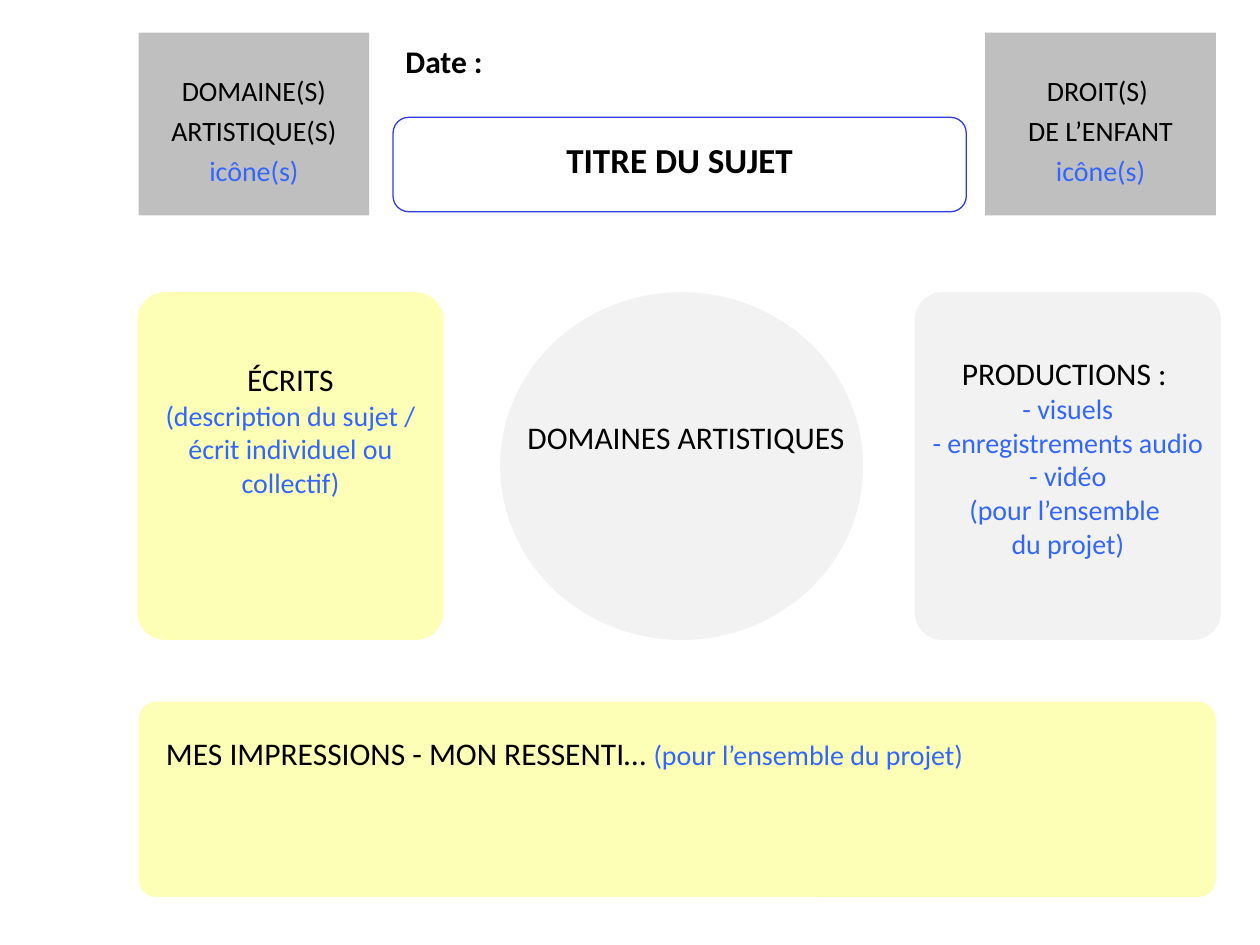
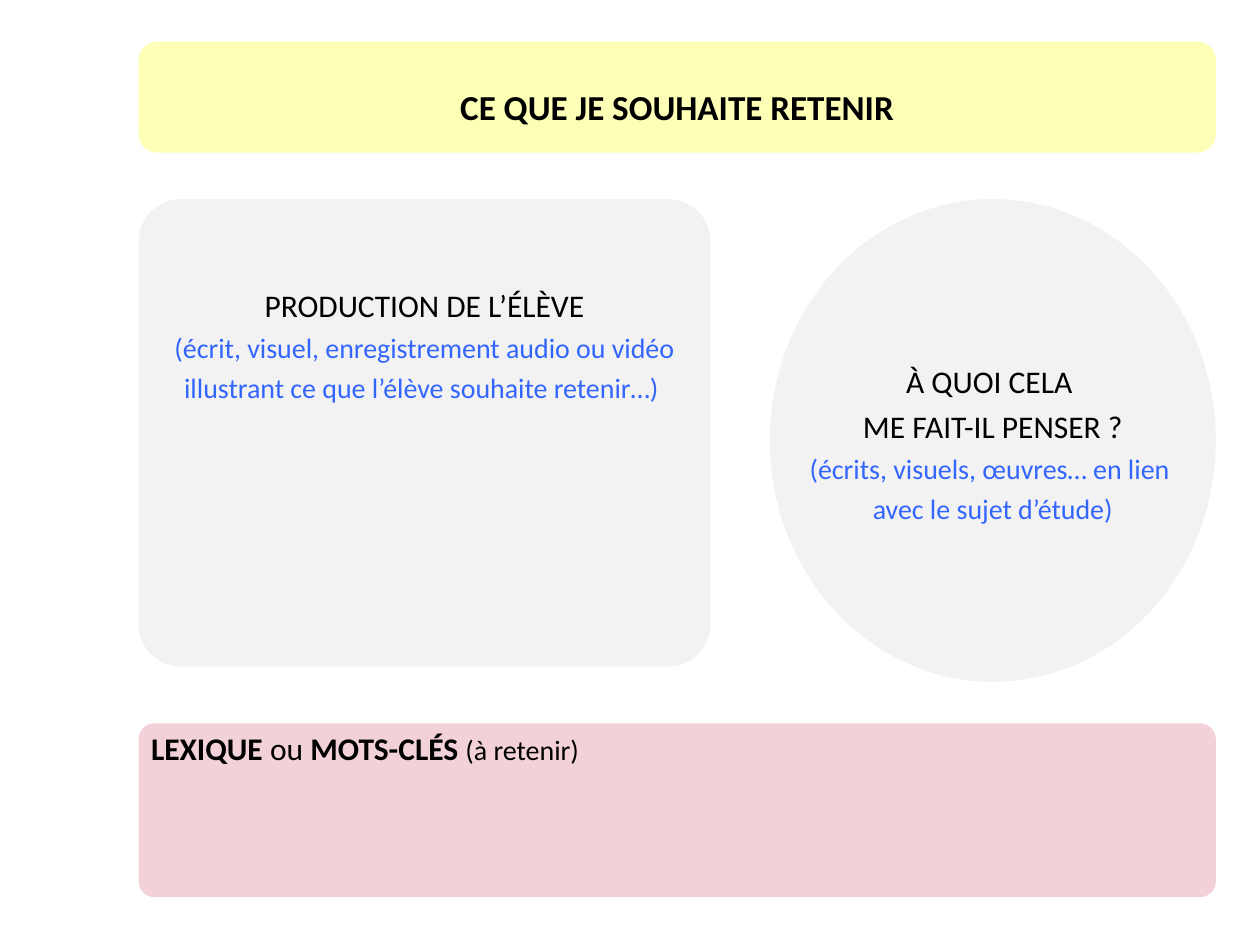
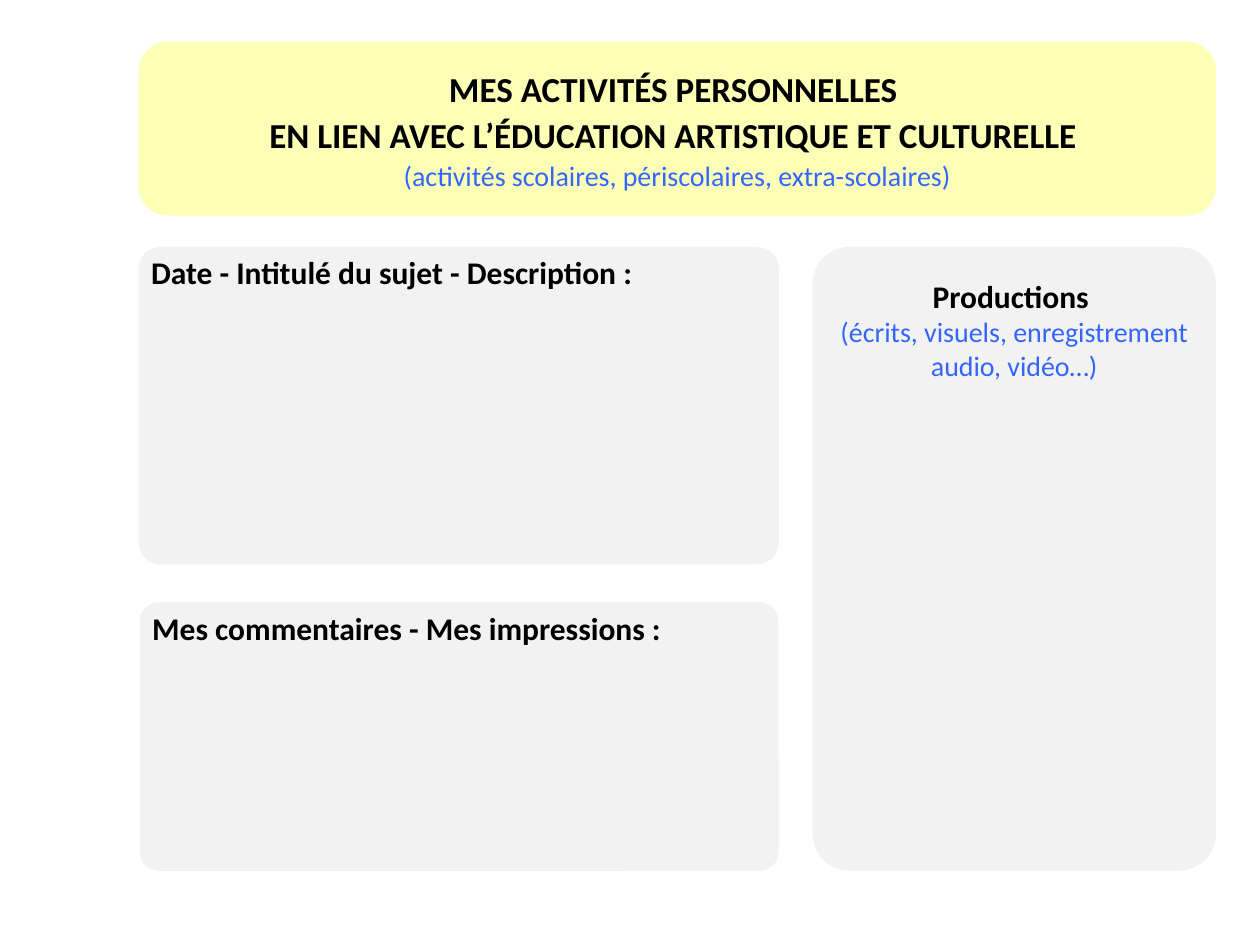
from dataclasses import dataclass, field

from lxml import etree
from pptx import Presentation
from pptx.dml.color import RGBColor
from pptx.enum import shapes as s, text as t
from pptx.oxml.ns import qn
from pptx.util import Pt

SLIDE_SIZE = (720, 540)
LEFT, RIGHT = 79.2, 694.8

THEME = {
    "font": "Calibri",
    "fills": {  # colour, opacity in percent
        "silver": ("BFBFBF", 100),
        "pale": ("F2F2F2", 100),
        "yellow": ("FDFFA0", 75),
        "pink": ("E9B4BE", 59),
    },
    "outline": ("2D3BDF", 0.75),
    "text": {  # size, bold, colour
        "title": (20, True, "000000"),
        "strong": (18, True, "000000"),
        "heading": (18, False, "000000"),
        "body": (16, False, "000000"),
        "hint": (16, False, "3366FF"),
    },
}

RECT, ROUND, OVAL = (s.MSO_SHAPE.RECTANGLE, s.MSO_SHAPE.ROUNDED_RECTANGLE,
                     s.MSO_SHAPE.OVAL)


@dataclass
class Panel:
    """A shape and its label; gap is the space left of it, drop the label's offset."""
    lines: list  # one list of (text, style) runs per paragraph
    width: float = None  # None reaches the right margin
    gap: float = 0
    top: float = None  # None takes the top and height of the row
    height: float = None
    outline: s.MSO_SHAPE = ROUND
    fill: str = "pale"
    corner: float = 0.091
    drop: float = 0
    label_height: float = 28.8
    inset: float = 0
    format: dict = field(default_factory=dict)


CENTRED = {"centred": True}
AIRY = {"centred": True, "spacing": 1.2}
TAG = dict(outline=RECT, fill="silver", drop=15.8, label_height=76.3, format=AIRY)

# Each slide is a list of rows: top, height, panels from left to right.
SLIDES = [
    [
        (18.7, 104.4, [
            Panel([[("DOMAINE(S) ARTISTIQUE(S)", "body")], [("icône(s)", "hint")]],
                  131.8, **TAG),
            Panel([[("TITRE DU SUJET", "title")]], 327.6, 13.6, 67, 54, fill=None,
                  corner=0.167, drop=8.6, label_height=31.7, format=CENTRED),
            Panel([[("DROIT(S) ", "body")], [("DE L’ENFANT", "body")],
                   [("icône(s)", "hint")]], gap=10.8, **TAG),
        ]),
        (167, 198.7, [
            Panel([[("ÉCRITS", "heading")],
                   [("(description du sujet / écrit individuel ou collectif)", "hint")]],
                  175, -0.7, drop=35.3, label_height=87, format=CENTRED),
            Panel([[("DOMAINES ARTISTIQUES", "heading")]], 207.4, 32.3, outline=OVAL,
                  drop=64, label_height=59, inset=5, format=AIRY),
            Panel([[("PRODUCTIONS : ", "heading")], [("- visuels", "hint")],
                   [("- enregistrements audio", "hint")], [("- vidéo", "hint")],
                   [("(pour l’ensemble ", "hint")], [("du projet)", "hint")]],
                  175, 29.5, drop=27.4, label_height=130.3,
                  format={"centred": True, "first_spacing": 1.2}),
        ]),
        (401, 111.6, [
            Panel([[("MES IMPRESSIONS - MON RESSENTI… ", "heading"),
                    ("(pour l’ensemble du projet)", "hint")]],
                  fill="yellow", drop=15.1, inset=8.6),
        ]),
        (20.2, 28.8, [
            Panel([[("Date :", "strong")]], 327.6, 145.4, outline=None),
        ]),
    ],
    [
        (23.8, 63.4, [
            Panel([[("CE QUE JE SOUHAITE RETENIR", "title")]], fill="yellow",
                  corner=0.167, drop=16.6, label_height=35.3, format=AIRY),
        ]),
        (113.8, 267.1, [
            Panel([[("PRODUCTION DE L’ÉLÈVE", "heading")],
                   [("(écrit, visuel, enregistrement audio ou vidéo "
                     "illustrant ce que l’élève souhaite retenir…) ", "hint")]],
                  326.9, drop=41.8, label_height=79.2, format=AIRY),
            Panel([[("À QUOI CELA ", "heading")], [("ME FAIT-IL PENSER ?", "heading")],
                   [("(écrits, visuels, œuvres… en lien ", "hint")],
                   [("avec le sujet d’étude)", "hint")]],
                  gap=33.8, height=275.8, outline=OVAL, drop=85, label_height=105.8,
                  format=AIRY),
        ]),
        (413.3, 99.4, [
            Panel([[("LEXIQUE", "strong"), (" ou ", "heading"),
                    ("MOTS-CLÉS ", "strong"), ("(à retenir)", "body")]], fill="pink"),
        ]),
    ],
    [
        (23.8, 99.4, [
            Panel([[("MES ACTIVITÉS PERSONNELLES ", "title")],
                   [("EN LIEN AVEC L’ÉDUCATION ARTISTIQUE ET CULTURELLE ", "title")],
                   [("(activités scolaires, périscolaires, extra-scolaires)", "hint")]],
                  fill="yellow", corner=0.167, drop=8.6, label_height=81.4,
                  format={"centred": True, "spacing": 1.1}),
        ]),
        (141.1, 181.4, [
            Panel([[("Date - Intitulé du sujet - Description :", "strong")]],
                  365.8, corner=0.069),
            Panel([[("Productions ", "strong")],
                   [("(écrits, visuels, enregistrement audio, vidéo…)", "hint")]],
                  gap=19.4, height=356.4, drop=13.7, label_height=67.7, format=CENTRED),
        ]),
        (344.2, 153.4, [
            Panel([[("Mes commentaires - Mes impressions :", "strong")]],
                  365, 0.7, corner=0.069),
        ]),
    ],
]
SLIDES[0][1][2][0].fill = "yellow"


def add_panel_shape(slide, panel, box):
    shape = slide.shapes.add_shape(panel.outline, *map(Pt, box))
    shape.shadow.inherit = False
    if panel.outline == ROUND:
        shape.adjustments[0] = panel.corner
    if panel.fill is None:
        colour, weight = THEME["outline"]
        shape.fill.background()
        shape.line.color.rgb = RGBColor.from_string(colour)
        shape.line.width = Pt(weight)
        return
    colour, opacity = THEME["fills"][panel.fill]
    shape.line.fill.background()
    shape.fill.solid()
    shape.fill.fore_color.rgb = RGBColor.from_string(colour)
    if opacity < 100:
        tint = shape._element.spPr.find(qn("a:solidFill"))[0]
        etree.SubElement(tint, qn("a:alpha")).set("val", str(opacity * 1000))


def add_text(slide, lines, box, *, centred=False, spacing=1.0, first_spacing=None):
    frame = slide.shapes.add_textbox(*map(Pt, box)).text_frame
    frame.word_wrap = True
    frame.auto_size = t.MSO_AUTO_SIZE.SHAPE_TO_FIT_TEXT
    for number, line in enumerate(lines):
        paragraph = frame.add_paragraph() if number else frame.paragraphs[0]
        paragraph.alignment = t.PP_ALIGN.CENTER if centred else t.PP_ALIGN.LEFT
        paragraph.line_spacing = spacing if number else first_spacing or spacing
        for words, style in line:
            run = paragraph.add_run()
            run.text = words
            size, bold, colour = THEME["text"][style]
            run.font.name = THEME["font"]
            run.font.size = Pt(size)
            run.font.bold = bold
            run.font.color.rgb = RGBColor.from_string(colour)


def add_row(slide, row_top, row_height, panels):
    left = LEFT
    for panel in panels:
        left += panel.gap
        width = panel.width or RIGHT - left
        top = panel.top or row_top
        if panel.outline is not None:
            add_panel_shape(slide, panel, (left, top, width, panel.height or row_height))
        label_box = (left + panel.inset, top + panel.drop,
                     width - panel.inset, panel.label_height)
        add_text(slide, panel.lines, label_box, **panel.format)
        left += width


def main():
    deck = Presentation()
    deck.slide_width, deck.slide_height = map(Pt, SLIDE_SIZE)
    for rows in SLIDES:
        slide = deck.slides.add_slide(deck.slide_layouts[6])
        for row in rows:
            add_row(slide, *row)
    deck.save("out.pptx")


if __name__ == "__main__":
    main()
